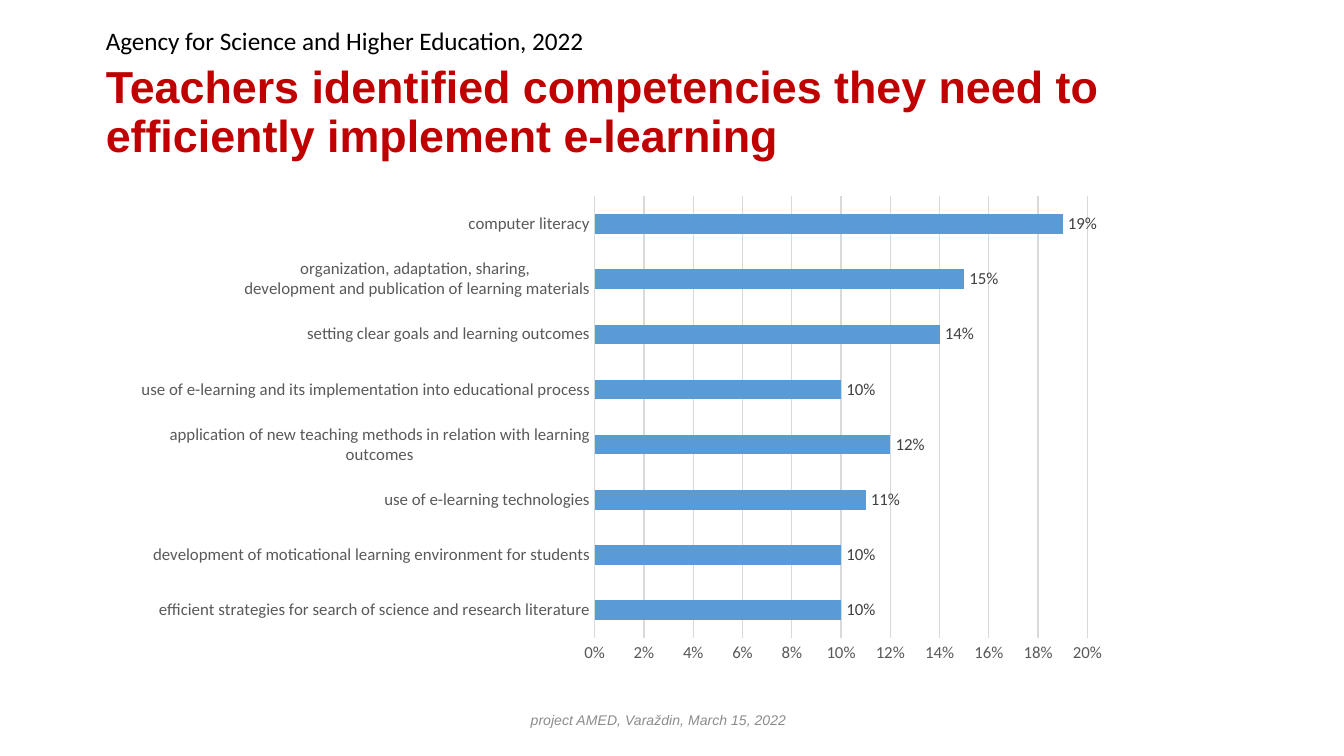
from dataclasses import dataclass

from lxml.etree import SubElement
from pptx import Presentation
from pptx.chart.data import CategoryChartData
from pptx.dml.color import RGBColor
from pptx.enum.chart import XL_CHART_TYPE as ChartType
from pptx.enum.chart import XL_LABEL_POSITION as LabelPosition
from pptx.enum.chart import XL_TICK_MARK as TickMark
from pptx.enum.text import MSO_ANCHOR as Anchor
from pptx.enum.text import PP_ALIGN as Align
from pptx.oxml.ns import qn
from pptx.util import Cm, Pt


@dataclass(frozen=True)
class Theme:
    heading_font: str = "Arial"
    body_font: str = "Calibri"
    title: str = "C00000"
    text: str = "000000"
    footer: str = "8C8C8C"
    axis: str = "595959"
    label: str = "404040"
    grid: str = "D9D9D9"
    bar: str = "5B9BD5"
    title_size: float = 24
    source_size: float = 13.5
    chart_size: float = 9
    footer_size: float = 7.5


@dataclass(frozen=True)
class Frame:
    left: float
    top: float
    width: float
    height: float

    def lengths(self) -> tuple:
        return Cm(self.left), Cm(self.top), Cm(self.width), Cm(self.height)


@dataclass(frozen=True)
class TextItem:
    text: str
    frame: Frame
    font: str
    size: float
    color: str
    bold: bool = False
    italic: bool = False
    align: Align = Align.LEFT
    anchor: Anchor = Anchor.MIDDLE
    line_spacing: float = 1.0


THEME = Theme()

TEXTS = (
    TextItem("Teachers identified competencies they need to efficiently implement e-learning",
             Frame(1.75, 0.76, 21.9, 2.77), THEME.heading_font, THEME.title_size,
             THEME.title, bold=True, line_spacing=0.9),
    TextItem("project AMED, Varaždin, March 15, 2022",
             Frame(4.42, 13.23, 16.05, 0.76), THEME.heading_font, THEME.footer_size,
             THEME.footer, italic=True, align=Align.CENTER),
    TextItem("Agency for Science and Higher Education, 2022",
             Frame(1.75, 0.36, 12.3, 0.84), THEME.body_font, THEME.source_size,
             THEME.text, anchor=Anchor.TOP),
)

CHART_FRAME = Frame(2.31, 3.53, 19, 9.17)
PLOT_AREA = {"x": 0.47, "y": 0.02, "w": 0.49, "h": 0.91}  # shares of the chart

# Listed from the bottom bar to the top one
COMPETENCIES = {
    "efficient strategies for search of science and research literature": 0.10,
    "development of moticational learning environment for students": 0.10,
    "use of e-learning technologies": 0.11,
    "application of new teaching methods in relation with learning outcomes": 0.12,
    "use of e-learning and its implementation into educational process": 0.10,
    "setting clear goals and learning outcomes": 0.14,
    "organization, adaptation, sharing, \ndevelopment and publication of learning materials": 0.15,
    "computer literacy": 0.19,
}


def set_font(font, name: str, size: float, color: str) -> None:
    font.name = name
    font.size = Pt(size)
    font.color.rgb = RGBColor.from_string(color)


def set_line(line, color: str) -> None:
    line.color.rgb = RGBColor.from_string(color)
    line.width = Pt(0.75)


def add_text(page, item: TextItem) -> None:
    box = page.shapes.add_textbox(*item.frame.lengths())
    frame = box.text_frame
    frame.word_wrap = True
    frame.vertical_anchor = item.anchor
    para = frame.paragraphs[0]
    para.text = item.text
    para.alignment = item.align
    para.line_spacing = item.line_spacing
    set_font(para.font, item.font, item.size, item.color)
    para.font.bold = item.bold
    para.font.italic = item.italic


def place_plot_area(chart, shares: dict[str, float]) -> None:
    plot_area = chart.plots[0]._element.getparent()
    layout = plot_area.find(qn("c:layout"))
    if layout is None:
        layout = SubElement(plot_area, qn("c:layout"))
        plot_area.insert(0, layout)
    manual = SubElement(layout, qn("c:manualLayout"))
    settings = {"layoutTarget": "inner", "xMode": "edge", "yMode": "edge", **shares}
    for name, value in settings.items():
        SubElement(manual, qn(f"c:{name}")).set("val", str(value))


def add_competency_chart(page) -> None:
    data = CategoryChartData(number_format="0%")
    data.categories = list(COMPETENCIES)
    data.add_series("Series 1", list(COMPETENCIES.values()))
    chart = page.shapes.add_chart(
        ChartType.BAR_CLUSTERED, *CHART_FRAME.lengths(), data).chart
    chart.has_legend = False
    chart.has_title = False
    set_font(chart.font, THEME.body_font, 10, THEME.text)
    place_plot_area(chart, PLOT_AREA)

    # Axes
    for axis in (chart.category_axis, chart.value_axis):
        axis.major_tick_mark = axis.minor_tick_mark = TickMark.NONE
        set_font(axis.tick_labels.font, THEME.body_font, THEME.chart_size, THEME.axis)
    set_line(chart.category_axis.format.line, THEME.grid)
    values = chart.value_axis
    values.minimum_scale, values.maximum_scale, values.major_unit = 0, 0.2, 0.02
    values.tick_labels.number_format = "0%"
    values.tick_labels.number_format_is_linked = False
    values.format.line.fill.background()
    set_line(values.major_gridlines.format.line, THEME.grid)

    # Bars and their labels
    plot = chart.plots[0]
    plot.gap_width = 182
    plot.vary_by_categories = False
    fill = plot.series[0].format.fill
    fill.solid()
    fill.fore_color.rgb = RGBColor.from_string(THEME.bar)
    labels = plot.series[0].data_labels
    labels.show_value = True
    labels.position = LabelPosition.OUTSIDE_END
    labels.number_format = "0%"
    labels.number_format_is_linked = False
    set_font(labels.font, THEME.body_font, THEME.chart_size, THEME.label)


def main() -> None:
    deck = Presentation()
    deck.slide_width, deck.slide_height = Cm(25.4), Cm(14.29)
    page = deck.slides.add_slide(deck.slide_layouts[6])
    for item in TEXTS:
        add_text(page, item)
    add_competency_chart(page)
    deck.save("out.pptx")


if __name__ == "__main__":
    main()
